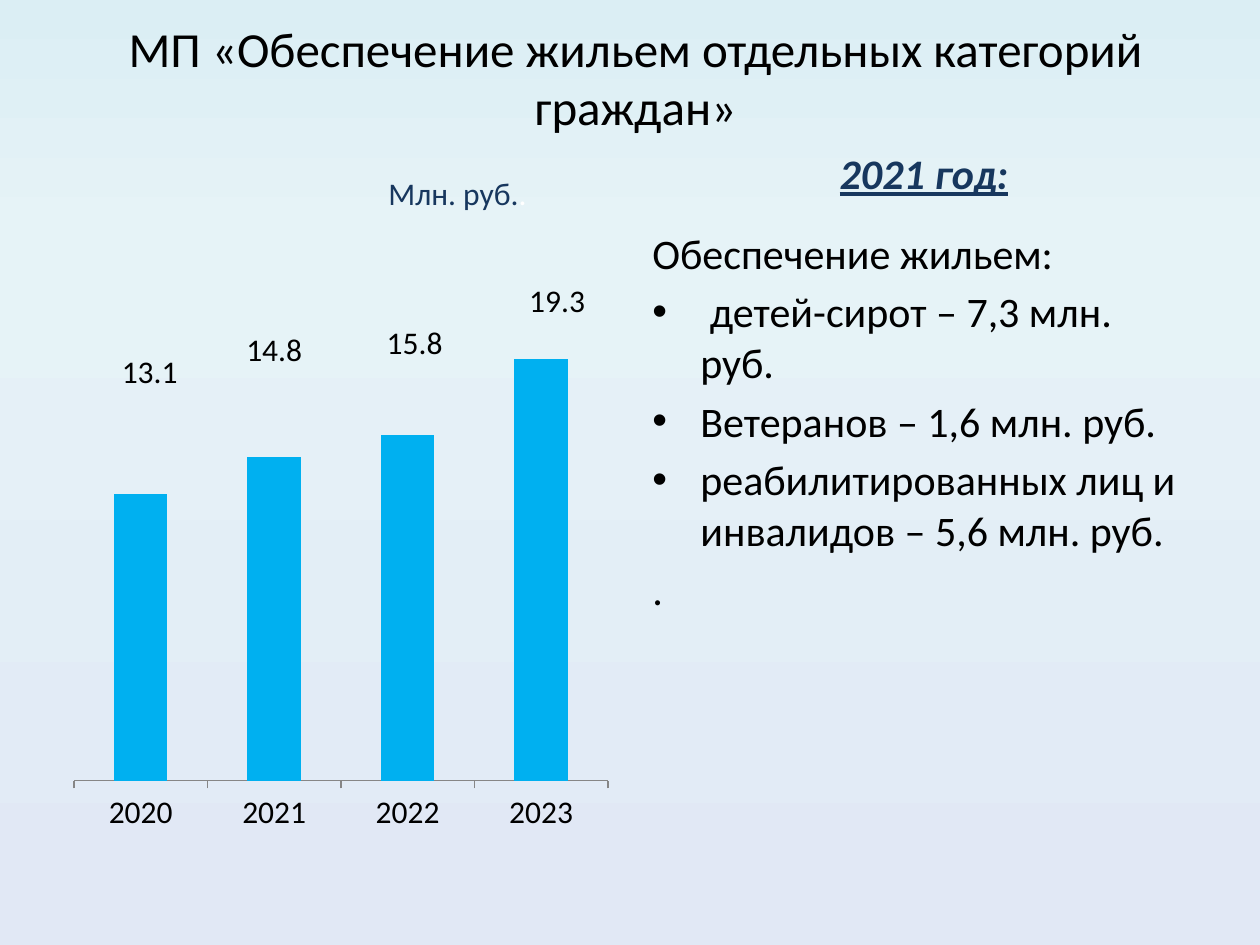
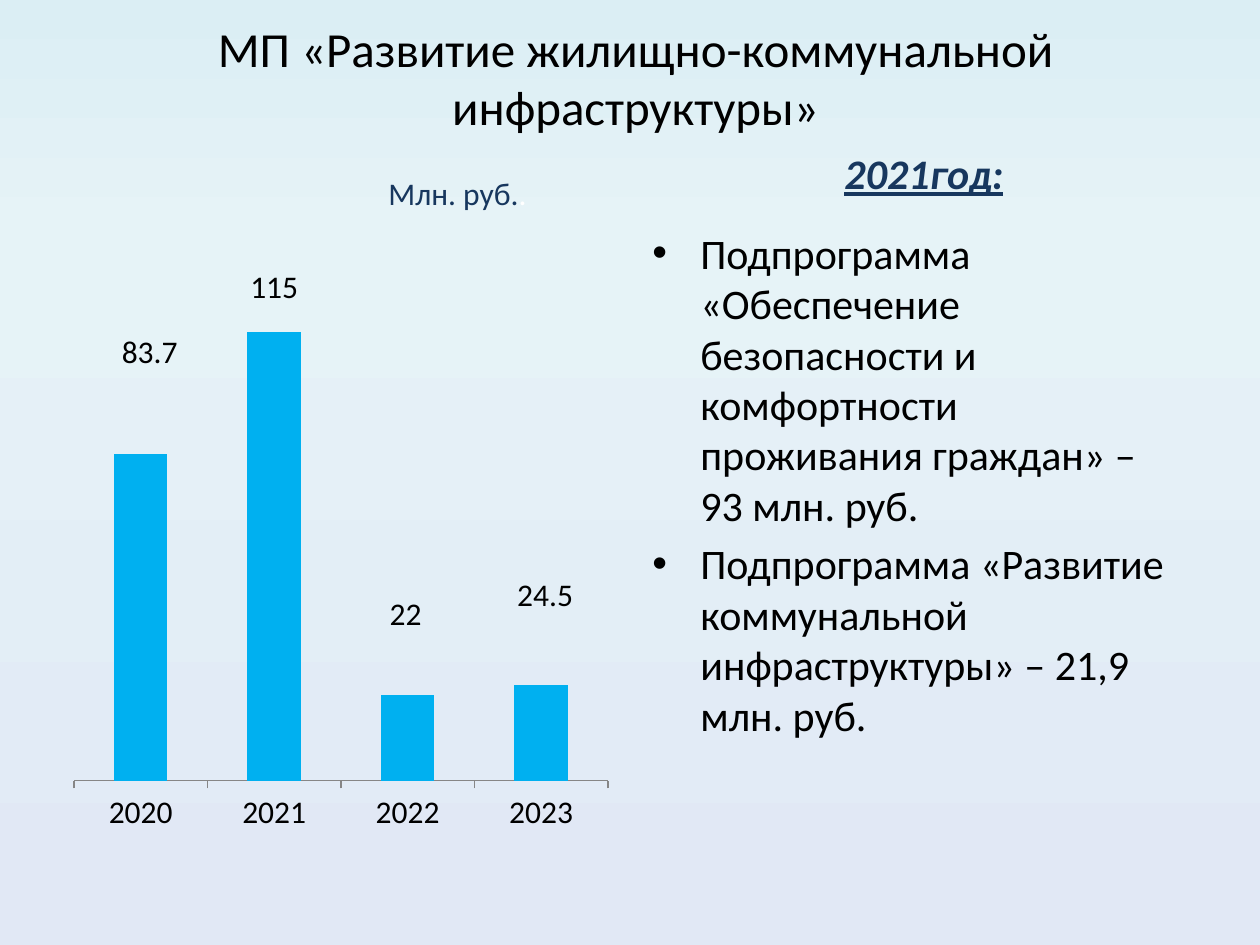
from lxml import etree
from pptx import Presentation
from pptx.chart.data import CategoryChartData
from pptx.dml.color import RGBColor
from pptx.enum.chart import XL_CHART_TYPE, XL_LABEL_POSITION, XL_TICK_MARK
from pptx.enum.text import MSO_ANCHOR, PP_ALIGN
from pptx.oxml.ns import qn
from pptx.util import Pt

COLUMN_STACKED = XL_CHART_TYPE.COLUMN_STACKED
LABEL_CENTER = XL_LABEL_POSITION.CENTER
TICK_OUTSIDE, TICK_NONE = XL_TICK_MARK.OUTSIDE, XL_TICK_MARK.NONE
TOP, MIDDLE = MSO_ANCHOR.TOP, MSO_ANCHOR.MIDDLE
LEFT, CENTER = PP_ALIGN.LEFT, PP_ALIGN.CENTER

EMU_PER_PX = 914400 / 126
FONT = "Calibri"
COLORS = {
    "text": "000000", "accent": "17375E", "white": "FFFFFF",
    "bar": "00B0F0", "axis": "868686",
}
BACKGROUND_STOPS = [(0, "DBEEF4"), (25, "E6F3F7"), (100, "E1E8F5")]
CHART_2012 = "http://schemas.microsoft.com/office/drawing/2012/chart"
LABEL_EXTENSION = "{CE6537A1-D6FC-4f65-9D91-7224C49458BB}"

# Boxes in px: left, top, width, height
SLIDE_SIZE = (1260, 945)
TITLE_BOX = (32, 38, 1207, 78)
CHART_BOX = (63, 221, 557, 624)
BODY_BOX = (640, 221, 557, 624)
YEAR_BOX = (819, 136, 210, 73)
UNIT_BOX = (368, 174, 179, 37)
PLOT_BOX = (11, 13, 534, 547)  # inside the chart box
BULLET_INDENT = 48

YEARS = ["2020", "2021", "2022", "2023"]
# Body lines are (text, has bullet); label shifts are px from the bar's middle
PROGRAMMES = [
    {
        "title": "МП «Обеспечение жильем отдельных категорий граждан»",
        "year": "2021 год:",
        "values": [13.1, 14.8, 15.8, 19.3],
        "axis_max": 25,
        "label_shifts": [(9, -265), (0, -269), (7, -265), (16, -268)],
        "body": [
            ("Обеспечение жильем:", False),
            (" детей-сирот – 7,3 млн. руб.", True),
            ("Ветеранов – 1,6 млн. руб.", True),
            ("реабилитированных лиц и инвалидов – 5,6 млн. руб.", True),
            (".", False),
        ],
    },
    {
        "title": "МП «Развитие жилищно-коммунальной инфраструктуры»",
        "year": "2021год:",
        "values": [83.7, 115, 22, 24.5],
        "axis_max": 140,
        "label_shifts": [(9, -265), (0, -269), (-2, -124), (4, -138)],
        "body": [
            ("Подпрограмма «Обеспечение безопасности и комфортности "
             "проживания граждан» – 93 млн. руб.", True),
            ("Подпрограмма «Развитие коммунальной инфраструктуры» – "
             "21,9 млн. руб.", True),
        ],
    },
]


def px(length):
    return round(length * EMU_PER_PX)


def rgb(name):
    return RGBColor.from_string(COLORS[name])


def add_element(parent, tag, **attributes):
    return etree.SubElement(parent, qn(tag), attributes)


def format_run(run, size, color):
    run.font.name = FONT
    run.font.size = Pt(size)
    run.font.color.rgb = rgb(color)


def add_text(slide, box, lines, size, color="text", anchor=MIDDLE, align=CENTER):
    """Add a wrapped text box with one paragraph per line."""
    shape = slide.shapes.add_textbox(*map(px, box))
    frame = shape.text_frame
    frame.word_wrap = True
    frame.vertical_anchor = anchor
    frame.text = "\n".join(lines)
    for paragraph in frame.paragraphs:
        paragraph.alignment = align
        for run in paragraph.runs:
            format_run(run, size, color)
    return frame.paragraphs


def paint_background(slide):
    fill = slide.background.fill
    fill.gradient()
    fill.gradient_angle = 270  # counter-clockwise: runs from top to bottom
    stops = next(slide._element.iter(qn("a:gsLst")))
    for stop in list(stops):
        stops.remove(stop)
    for position, color in BACKGROUND_STOPS:
        stop = add_element(stops, "a:gs", pos=str(position * 1000))
        add_element(stop, "a:srgbClr", val=color)


def add_layout(parent, index, **settings):
    """Insert a manual chart layout as the given child of parent."""
    for old_layout in parent.findall(qn("c:layout")):
        parent.remove(old_layout)
    layout = etree.Element(qn("c:layout"))
    manual = add_element(layout, "c:manualLayout")
    for name, value in settings.items():
        add_element(manual, f"c:{name}", val=str(value))
    parent.insert(index, layout)


def hide_leader_lines(labels):
    """Switch off the lines from moved labels to their columns."""
    for setting in labels.findall(qn("c:showLeaderLines")):
        setting.set("val", "0")
    extension = add_element(add_element(labels, "c:extLst"), "c:ext",
                            uri=LABEL_EXTENSION)
    etree.SubElement(extension, f"{{{CHART_2012}}}showLeaderLines",
                     {"val": "0"}, nsmap={"c15": CHART_2012})


def add_chart(slide, box, programme):
    data = CategoryChartData()
    data.categories = YEARS
    data.add_series("Series 1", programme["values"])
    chart = slide.shapes.add_chart(COLUMN_STACKED, *map(px, box), data).chart
    chart.has_title = False
    chart.has_legend = False
    chart.font.name = FONT
    chart.font.size = Pt(18)
    chart.font.color.rgb = rgb("text")
    width, height = box[2:]

    # Axes
    category_axis, value_axis = chart.category_axis, chart.value_axis
    category_axis.major_tick_mark = TICK_OUTSIDE
    category_axis.minor_tick_mark = TICK_NONE
    category_axis.format.line.color.rgb = rgb("axis")
    category_axis.format.line.width = Pt(0.75)
    value_axis.visible = False
    value_axis.has_major_gridlines = False
    value_axis.minimum_scale = 0
    value_axis.maximum_scale = programme["axis_max"]

    # Columns
    plot = chart.plots[0]
    plot.gap_width = 150
    plot.overlap = 100
    plot.vary_by_categories = False
    series = plot.series[0]
    series.format.fill.solid()
    series.format.fill.fore_color.rgb = rgb("bar")

    # Value labels raised above the columns
    series.data_labels.show_value = True
    for index in range(len(YEARS)):
        series.points[index].data_label.position = LABEL_CENTER
    labels = next(chart._chartSpace.iter(qn("c:dLbls")))
    point_labels = labels.findall(qn("c:dLbl"))
    for label, (right, down) in zip(point_labels, programme["label_shifts"]):
        add_layout(label, 1, x=right / width, y=down / height)
    hide_leader_lines(labels)

    # Plot area
    left, top, plot_width, plot_height = PLOT_BOX
    plot_area = next(chart._chartSpace.iter(qn("c:plotArea")))
    add_layout(plot_area, 0, layoutTarget="inner", xMode="edge", yMode="edge",
               x=left / width, y=top / height,
               w=plot_width / width, h=plot_height / height)


def add_body(slide, box, lines):
    texts = [text for text, _ in lines]
    paragraphs = add_text(slide, box, texts, 24, anchor=TOP, align=LEFT)
    for paragraph, (_, has_bullet) in zip(paragraphs, lines):
        paragraph.space_before = Pt(4.8)
        if has_bullet:
            properties = paragraph._p.get_or_add_pPr()
            properties.set("marL", str(px(BULLET_INDENT)))
            properties.set("indent", str(-px(BULLET_INDENT)))
            add_element(properties, "a:buFont", typeface="Arial")
            add_element(properties, "a:buChar", char="•")


def add_year(slide, box, text):
    font = add_text(slide, box, [text], 24, "accent")[0].runs[0].font
    font.bold = font.italic = font.underline = True


def add_unit(slide, box):
    paragraph = add_text(slide, box, ["Млн. руб."], 18, "accent")[0]
    final_dot = paragraph.add_run()
    final_dot.text = "."
    format_run(final_dot, 18, "white")


def add_programme_slide(presentation, programme):
    slide = presentation.slides.add_slide(presentation.slide_layouts[6])
    paint_background(slide)
    add_text(slide, TITLE_BOX, [programme["title"]], 28)
    add_chart(slide, CHART_BOX, programme)
    add_body(slide, BODY_BOX, programme["body"])
    add_year(slide, YEAR_BOX, programme["year"])
    add_unit(slide, UNIT_BOX)


def main():
    presentation = Presentation()
    presentation.slide_width, presentation.slide_height = map(px, SLIDE_SIZE)
    for programme in PROGRAMMES:
        add_programme_slide(presentation, programme)
    presentation.save("out.pptx")


if __name__ == "__main__":
    main()
